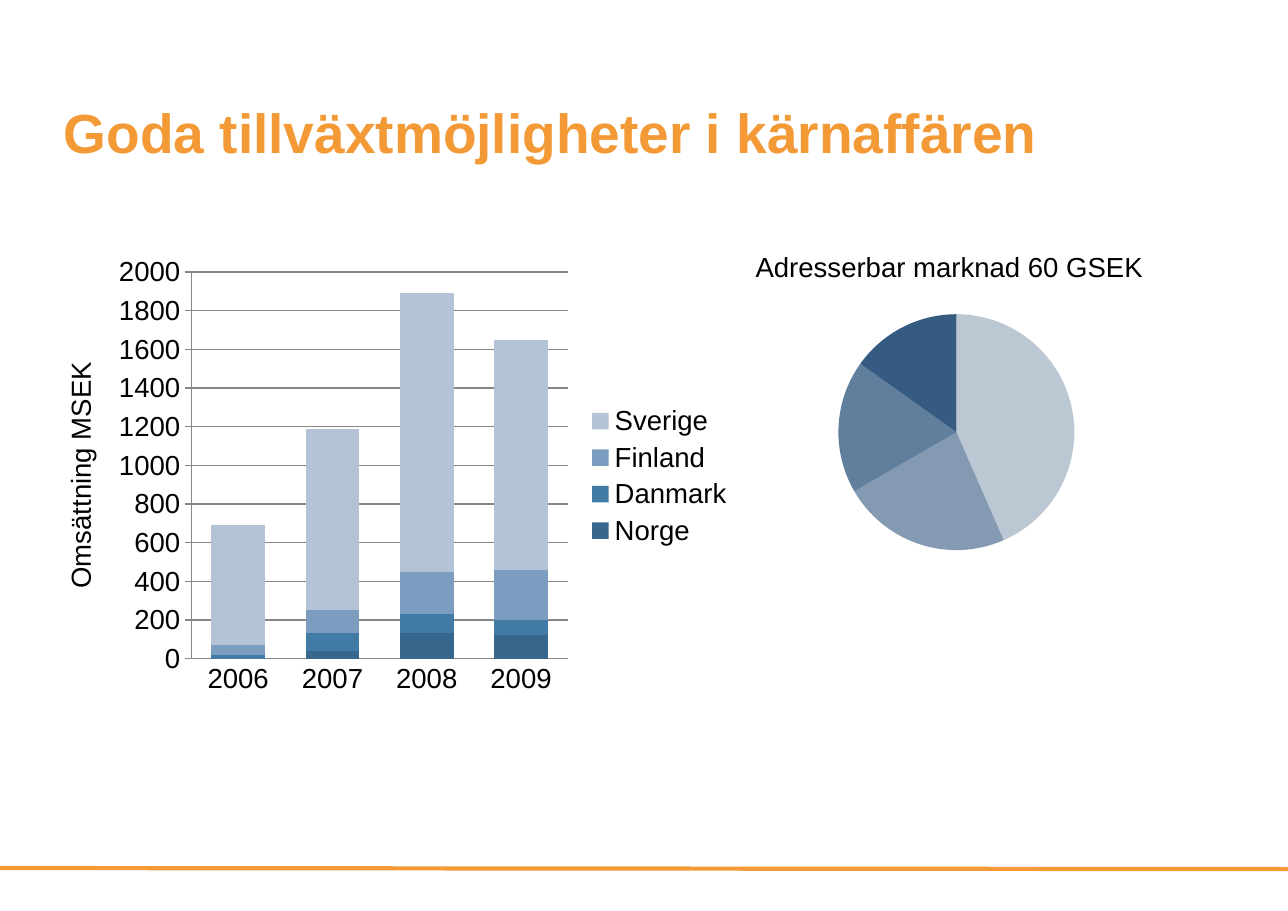
from lxml.etree import SubElement
from pptx import Presentation
from pptx.chart.data import CategoryChartData
from pptx.dml.color import RGBColor
from pptx.enum.chart import XL_CHART_TYPE, XL_LEGEND_POSITION, XL_TICK_MARK
from pptx.enum.shapes import MSO_CONNECTOR
from pptx.oxml import parse_xml
from pptx.oxml.ns import nsdecls, qn
from pptx.util import Inches, Pt

COLORS = {
    "orange": "F39936", "black": "000000", "axis": "868686",
    "Norge": "37678C", "Danmark": "427CA6", "Finland": "7A9DC0", "Sverige": "B4C2D6",
    "slate": "456587", "navy": "355B82",
}


def set_font(font, size, color="black", name="Arial", bold=False):
    formats = {"size": Pt(size), "name": name, "bold": bold}
    for attribute, value in formats.items():
        setattr(font, attribute, value)
    font.color.rgb = RGBColor.from_string(COLORS[color])


def place_plot(chart, left, top, width, height):
    """Fix the inner plot area as fractions of the chart frame."""
    plot_area = chart.plots[0]._element.getparent()
    for old in plot_area.findall(qn("c:layout")):
        plot_area.remove(old)
    plot_area.insert(0, parse_xml(
        f'<c:layout {nsdecls("c")}><c:manualLayout><c:layoutTarget val="inner"/>'
        f'<c:xMode val="edge"/><c:yMode val="edge"/><c:x val="{left}"/><c:y val="{top}"/>'
        f'<c:w val="{width}"/><c:h val="{height}"/></c:manualLayout></c:layout>'))


deck = Presentation()
deck.slide_width, deck.slide_height = Inches(11.69), Inches(8.27)
page = deck.slides.add_slide(deck.slide_layouts[6])

# Footer rule
rule = page.shapes.add_connector(
    MSO_CONNECTOR.STRAIGHT, Inches(0), Inches(7.88), Inches(11.69), Inches(7.89))
rule.line.color.rgb = RGBColor.from_string(COLORS["orange"])
rule.line.width = Pt(2.75)
SubElement(rule._element.spPr, qn("a:effectLst"))

# Title and pie heading
headings = [
    ("Goda tillväxtmöjligheter i kärnaffären", (0.58, 0.89, 10.47, 1.19), 36, "orange", True),
    ("Adresserbar marknad 60 GSEK", (6.76, 2.22, 3.77, 0.4), 18, "black", False),
]
for text, place, size, color, is_title in headings:
    box = page.shapes.add_textbox(*map(Inches, place))
    frame = box.text_frame
    frame.word_wrap = is_title
    if is_title:
        for side in ("left", "top", "right", "bottom"):
            setattr(frame, f"margin_{side}", 0)
    span = frame.paragraphs[0].add_run()
    span.text = text
    set_font(span.font, size, color, bold=is_title)

# Revenue by country and year
revenue = CategoryChartData()
revenue.categories = ["2006", "2007", "2008", "2009"]
revenue.add_series("Norge", [None, 40, 130, 120])
revenue.add_series("Danmark", [20, 90, 100, 80])
revenue.add_series("Finland", [50, 120, 220, 260])
revenue.add_series("Sverige", [620, 940, 1440, 1190])
columns = page.shapes.add_chart(
    XL_CHART_TYPE.COLUMN_STACKED, Inches(0.35), Inches(2.25), Inches(6.41), Inches(4.14),
    revenue).chart
set_font(columns.font, 18)
columns.has_title = False
columns.has_legend = True
columns.legend.position = XL_LEGEND_POSITION.RIGHT
columns.legend.include_in_layout = False
plot = columns.plots[0]
plot.gap_width, plot.overlap, plot.vary_by_categories = 75, 100, False
for series in plot.series:
    series.format.fill.solid()
    series.format.fill.fore_color.rgb = RGBColor.from_string(COLORS[series.name])
place_plot(columns, 0.216, 0.053, 0.534, 0.848)

# Axes
years, amounts = columns.category_axis, columns.value_axis
years.major_tick_mark = XL_TICK_MARK.NONE
amounts.major_tick_mark = XL_TICK_MARK.OUTSIDE
amounts.minimum_scale, amounts.maximum_scale, amounts.major_unit = 0, 2000, 200
amounts.has_major_gridlines = True
for part in (years, amounts, amounts.major_gridlines):
    part.format.line.color.rgb = RGBColor.from_string(COLORS["axis"])
    part.format.line.width = Pt(0.75)
title_frame = amounts.axis_title.text_frame
title_frame.text = "Omsättning MSEK"
set_font(title_frame.paragraphs[0].runs[0].font, 18)

# Addressable market
market = CategoryChartData()
market.categories = ["1", "2", "3", "4"]
market.add_series("Series 1", [43, 23, 18, 15])
pie = page.shapes.add_chart(
    XL_CHART_TYPE.PIE, Inches(6.43), Inches(2.72), Inches(4.52), Inches(2.42), market).chart
set_font(pie.font, 18, name="TeX Gyre Schola")
pie.has_title = pie.has_legend = False
pie.plots[0].vary_by_categories = True
slices = [("slate", 36), ("navy", 61), ("navy", 78), ("navy", 100)]
for index, (color, opacity) in enumerate(slices):
    point = pie.plots[0].series[0].points[index]
    point.format.line.fill.background()
    fill = point.format.fill
    fill.solid()
    fill.fore_color.rgb = RGBColor.from_string(COLORS[color])
    if opacity < 100:
        tone = point.format._element.find(".//" + qn("a:srgbClr")) if hasattr(
            point.format, "_element") else fill._xPr.find(".//" + qn("a:srgbClr"))
        SubElement(tone, qn("a:alpha")).set("val", str(opacity * 1000))
place_plot(pie, 0.261, 0.055, 0.474, 0.885)

deck.save("out.pptx")
